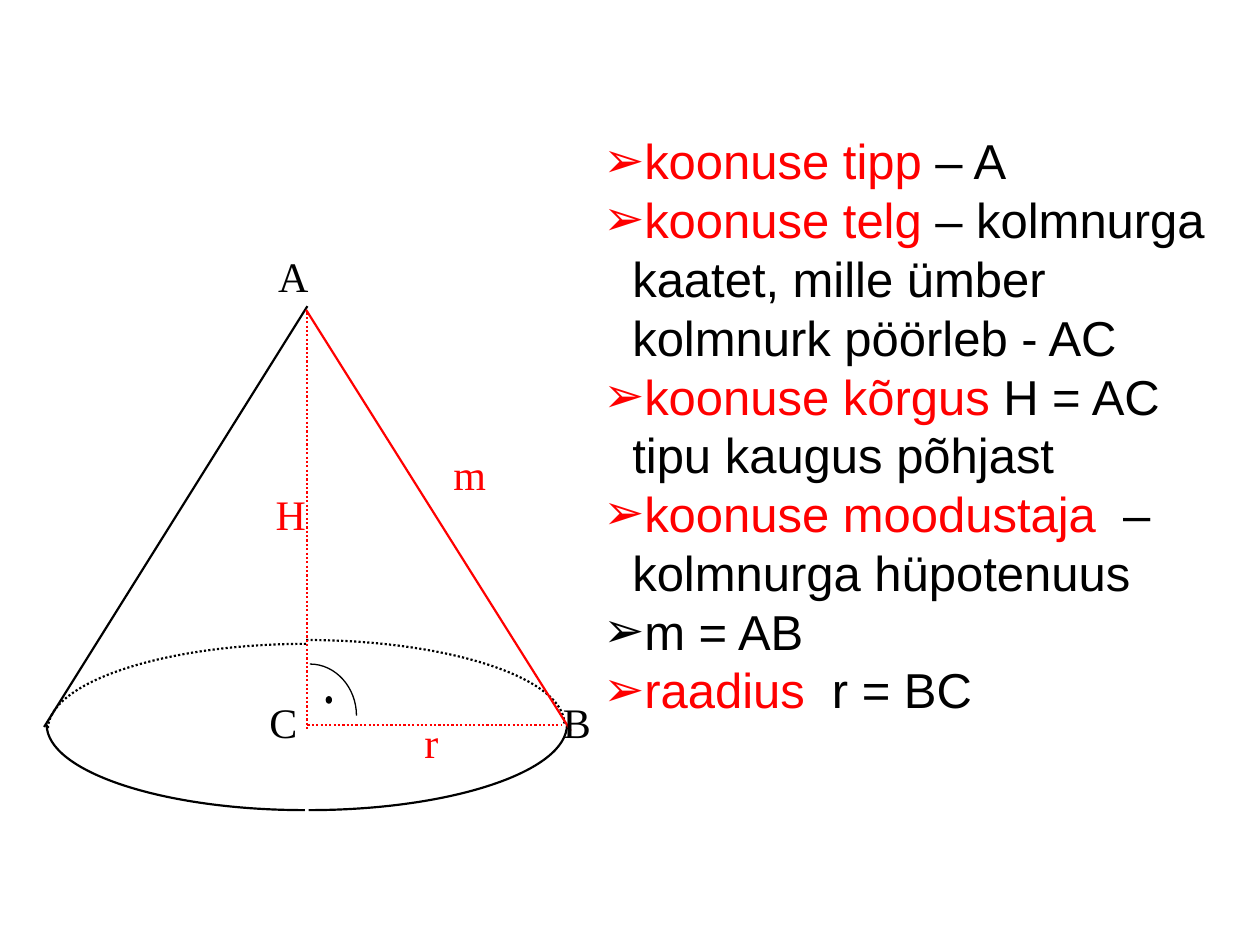
from dataclasses import dataclass

from lxml.etree import SubElement
from pptx import Presentation
from pptx.dml.color import RGBColor
from pptx.enum.dml import MSO_LINE
from pptx.enum.shapes import MSO_CONNECTOR, MSO_SHAPE
from pptx.enum.text import MSO_ANCHOR, PP_ALIGN
from pptx.oxml.ns import qn
from pptx.util import Inches, Pt

COLORS = {"ink": "000000", "accent": "FF0000", "paper": "FFFFFF"}
COLUMNS, ROWS = 100, 75
CELL = Inches(0.1)
CURVE_SHARE = 0.55  # control point distance of a quarter ellipse, as a share of its radius


@dataclass(frozen=True)
class Arc:
    """Quarter ellipse; the signs of the radii choose the quadrant."""
    column: float
    row: float
    radius_x: float
    radius_y: float
    dotted: bool = False
    width: float = 1.25


@dataclass(frozen=True)
class Segment:
    start: tuple[float, float]
    end: tuple[float, float]
    color: str = "accent"
    dotted: bool = False


@dataclass(frozen=True)
class Label:
    text: str
    column: float
    row: float
    color: str = "ink"


@dataclass(frozen=True)
class Definition:
    term: str
    meaning: str


ARCS = [
    Arc(24.3, 57.5, 20.5, -6.7, dotted=True),
    Arc(24.3, 57.9, -20.5, -6.8, dotted=True),
    Arc(24.5, 57.5, 20.5, 6.8),
    Arc(24.2, 57.5, -20.5, 6.8),
    Arc(24.6, 56.8, 3.7, -4.1, width=0.75),
]
SEGMENTS = [
    Segment((24.4, 24.3), (3.5, 57.7), "ink"),
    Segment((24.3, 24.6), (45.3, 58)),
    Segment((24.37, 24.8), (24.37, 57.9), dotted=True),
    Segment((24.4, 57.53), (44.5, 57.53), dotted=True),
]
LABELS = [
    Label("C", 20.4, 54.8),
    Label("A", 21.1, 19.4),
    Label("m", 35, 35.1, "accent"),
    Label("H", 20.9, 38.3, "accent"),
    Label("r", 32.7, 56.4, "accent"),
    Label("B", 43.7, 54.8),
]
DEFINITIONS = [
    Definition("koonuse tipp ", "– A"),
    Definition("koonuse telg ", "– kolmnurga kaatet, mille ümber kolmnurk pöörleb - AC"),
    Definition("koonuse kõrgus ", "H = AC  tipu kaugus põhjast"),
    Definition("koonuse moodustaja  ", "– kolmnurga hüpotenuus"),
    Definition("", "m = AB"),
    Definition("raadius", "  r = BC"),
]


def cells(*counts: float) -> list[int]:
    return [round(count * CELL) for count in counts]


def rgb(name: str) -> RGBColor:
    return RGBColor.from_string(COLORS[name])


def assign(target, **values) -> None:
    for name, value in values.items():
        setattr(target, name, value)


def style_line(line, color: str, width: float, dotted: bool) -> None:
    line.color.rgb = rgb(color)
    line.width = Pt(width)
    if dotted:
        line.dash_style = MSO_LINE.ROUND_DOT


def add_span(para, text: str, font: str, size: float, color: str) -> None:
    span = para.add_run()
    span.text = text
    assign(span.font, name=font, size=Pt(size))
    span.font.color.rgb = rgb(color)


def bend(curve) -> None:
    """Turn the three straight pieces of an outline into one Bézier curve."""
    path = next(curve._element.iter(qn("a:path")))
    pieces = path.findall(qn("a:lnTo"))
    bezier = SubElement(path, qn("a:cubicBezTo"))
    for piece in pieces:
        bezier.append(piece[0])
        path.remove(piece)


def draw_arc(shapes, arc: Arc) -> None:
    shares = [(0, 1), (CURVE_SHARE, 1), (1, CURVE_SHARE), (1, 0)]
    points = [
        cells(arc.column + arc.radius_x * across, arc.row + arc.radius_y * down)
        for across, down in shares
    ]
    builder = shapes.build_freeform(*points[0])
    builder.add_line_segments(points[1:], close=False)
    curve = builder.convert_to_shape()
    bend(curve)
    curve.shadow.inherit = False
    curve.fill.background()
    style_line(curve.line, "ink", arc.width, arc.dotted)


def draw_segment(shapes, segment: Segment) -> None:
    connector = shapes.add_connector(
        MSO_CONNECTOR.STRAIGHT, *cells(*segment.start, *segment.end))
    style_line(connector.line, segment.color, 1.25, segment.dotted)
    SubElement(connector._element.spPr, qn("a:effectLst"))


def draw_label(shapes, label: Label) -> None:
    box = shapes.add_textbox(*cells(label.column, label.row, 6.6, 6))
    box.text_frame.word_wrap = True
    add_span(box.text_frame.paragraphs[0], label.text, "Times New Roman", 24, label.color)


def draw_right_angle_dot(shapes) -> None:
    dot = shapes.add_shape(MSO_SHAPE.OVAL, *cells(25.9, 55.3, 0.4, 0.5))
    dot.shadow.inherit = False
    dot.fill.solid()
    dot.fill.fore_color.rgb = rgb("ink")
    style_line(dot.line, "ink", 0.75, False)


def add_bullet(para) -> None:
    properties = para._p.get_or_add_pPr()
    properties.set("marL", str(Inches(0.23)))
    properties.set("indent", str(-Inches(0.23)))
    SubElement(properties, qn("a:buFont"), typeface="Arial")
    SubElement(properties, qn("a:buChar"), char="➢")


def draw_definitions(shapes, definitions: list[Definition]) -> None:
    panel = shapes.add_shape(MSO_SHAPE.RECTANGLE, *cells(46.9, 9.9, 51.2, 61.4))
    panel.shadow.inherit = False
    panel.fill.solid()
    panel.fill.fore_color.rgb = rgb("paper")
    panel.line.fill.background()
    frame = panel.text_frame
    assign(frame, word_wrap=True, vertical_anchor=MSO_ANCHOR.TOP, margin_top=Inches(0.05))
    for index, definition in enumerate(definitions):
        para = frame.add_paragraph() if index else frame.paragraphs[0]
        assign(para, alignment=PP_ALIGN.LEFT, line_spacing=Pt(33.6))
        add_bullet(para)
        for text, color in ((definition.term, "accent"), (definition.meaning, "ink")):
            if text:
                add_span(para, text, "Arial", 28, color)


def main() -> None:
    deck = Presentation()
    assign(deck, slide_width=COLUMNS * CELL, slide_height=ROWS * CELL)
    page = deck.slides.add_slide(deck.slide_layouts[6])
    cone = page.shapes.add_group_shape().shapes
    for arc in ARCS:
        draw_arc(cone, arc)
    for segment in SEGMENTS:
        draw_segment(cone, segment)
    draw_right_angle_dot(cone)
    for label in LABELS:
        draw_label(cone, label)
    draw_definitions(page.shapes, DEFINITIONS)
    deck.save("out.pptx")


if __name__ == "__main__":
    main()
